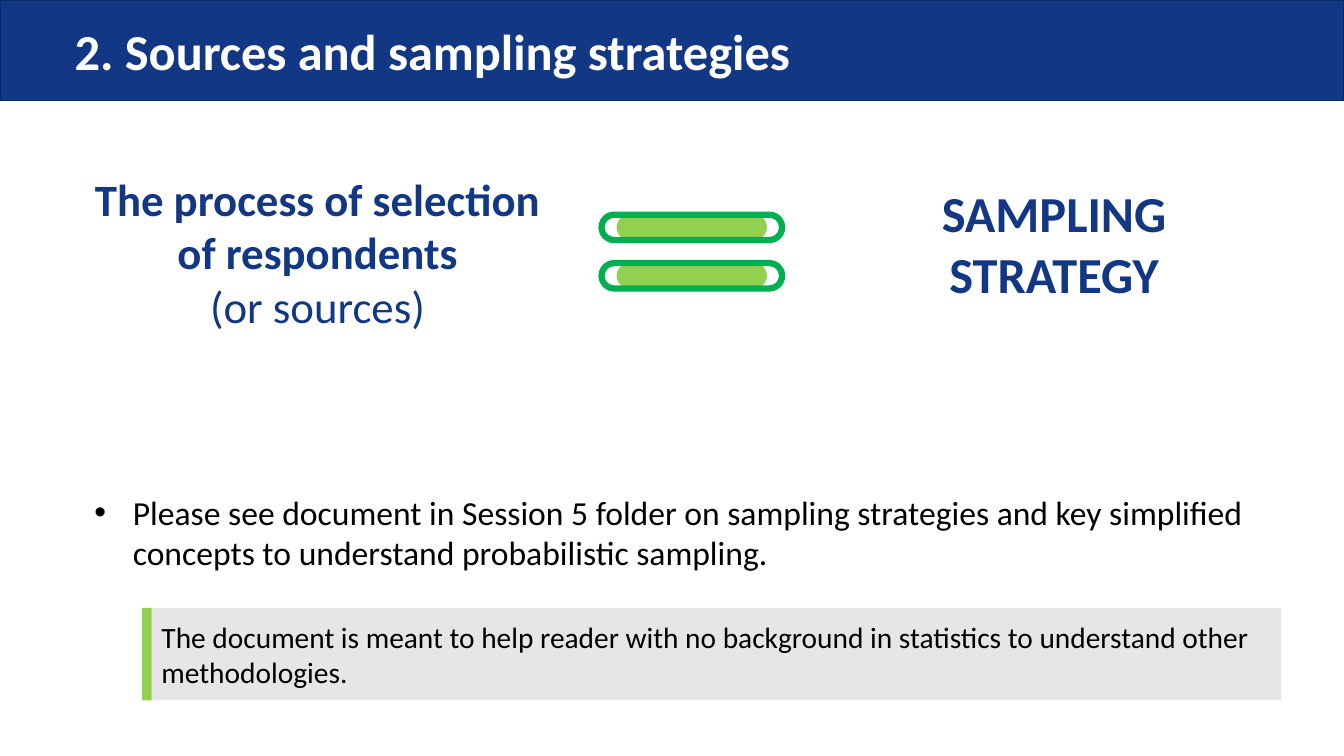
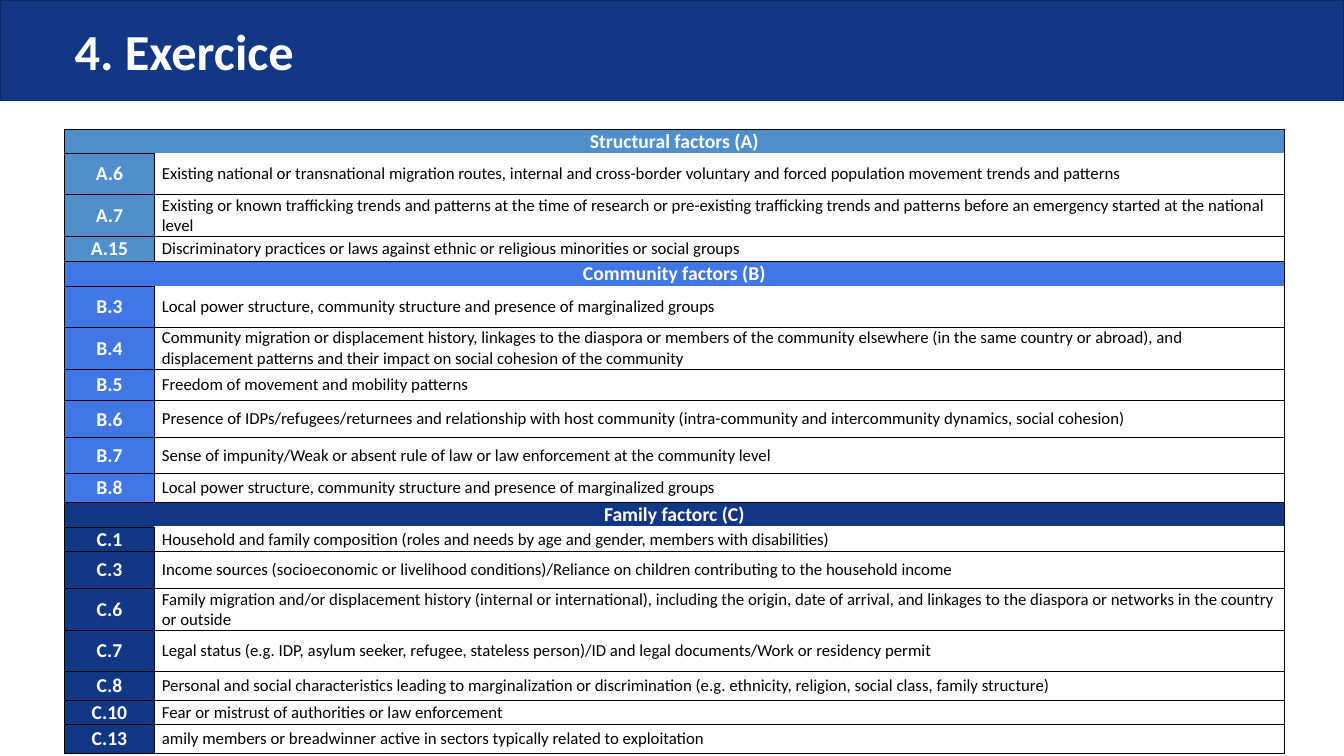
from lxml import etree
from pptx import Presentation
from pptx import util as u
from pptx.dml.color import RGBColor
from pptx.enum import shapes, text
from pptx.oxml import ns

NAVY, SKY, BLUE = "123885", "508FCC", "4177E5"
LIME, GREEN, GREY = "92D050", "00B050", "E7E6E6"
WHITE, BLACK, EDGE = "FFFFFF", "000000", "0D2962"
FONT = "Calibri"
WIDTH, HEIGHT = 33.87, 19.05
CENTER = text.PP_ALIGN.CENTER
MIDDLE = text.MSO_ANCHOR.MIDDLE
RECT = shapes.MSO_SHAPE.RECTANGLE
PILL = shapes.MSO_SHAPE.ROUNDED_RECTANGLE

FACTORS = [
    ("Structural factors (A)", SKY, [
        ("A.6", 1.04, "Existing national or transnational migration routes, internal and cross-border voluntary and forced population movement trends and patterns"),
        ("A.7", 1.06, "Existing or known trafficking trends and patterns at the time of research or pre-existing trafficking trends and patterns before an emergency started at the national level"),
        ("A.15", 0.62, "Discriminatory practices or laws against ethnic or religious minorities or social groups"),
    ]),
    ("Community factors (B)", BLUE, [
        ("B.3", 1.04, "Local power structure, community structure and presence of marginalized groups"),
        ("B.4", 1.06, "Community migration or displacement history, linkages to the diaspora or members of the community elsewhere (in the same country or abroad), and displacement patterns and their impact on social cohesion of the community"),
        ("B.5", 0.79, "Freedom of movement and mobility patterns"),
        ("B.6", 0.93, "Presence of IDPs/refugees/returnees and relationship with host community (intra-community and intercommunity dynamics, social cohesion)"),
        ("B.7", 0.91, "Sense of impunity/Weak or absent rule of law or law enforcement at the community level"),
        ("B.8", 0.72, "Local power structure, community structure and presence of marginalized groups"),
    ]),
    ("Family factorc (C)", NAVY, [
        ("C.1", 0.62, "Household and family composition (roles and needs by age and gender, members with disabilities)"),
        ("C.3", 0.93, "Income sources (socioeconomic or livelihood conditions)/Reliance on children contributing to the household income"),
        ("C.6", 1.06, "Family migration and/or displacement history (internal or international), including the origin, date of arrival, and linkages to the diaspora or networks in the country or outside"),
        ("C.7", 1.04, "Legal status (e.g. IDP, asylum seeker, refugee, stateless person)/ID and legal documents/Work or residency permit"),
        ("C.8", 0.71, "Personal and social characteristics leading to marginalization or discrimination (e.g. ethnicity, religion, social class, family structure)"),
        ("C.10", 0.62, "Fear or mistrust of authorities or law enforcement"),
        ("C.13", 0.72, "amily members or breadwinner active in sectors typically related to exploitation"),
    ]),
]


def rgb(code):
    """Turn a hex string into a colour."""
    return RGBColor.from_string(code)


def write(frame, lines, size, color, bold=False, align=None):
    """Fill a text frame with one paragraph per line and format it."""
    frame.word_wrap = True
    frame.text = "\n".join(lines)
    for paragraph in frame.paragraphs:
        paragraph.alignment = align
        for run in paragraph.runs:
            run.font.name, run.font.size, run.font.bold = FONT, u.Pt(size), bold
            run.font.color.rgb = rgb(color)


def add_label(slide, box, lines, size, color, **style):
    """Place a text box and return its frame."""
    frame = slide.shapes.add_textbox(*map(u.Cm, box)).text_frame
    write(frame, lines, size, color, **style)
    return frame


def add_block(slide, kind, box, fill=None, line=None, weight=1):
    """Place a flat preset shape."""
    block = slide.shapes.add_shape(kind, *map(u.Cm, box))
    block.shadow.inherit = False
    if fill:
        block.fill.solid()
        block.fill.fore_color.rgb = rgb(fill)
    else:
        block.fill.background()
    if line:
        block.line.color.rgb = rgb(line)
        block.line.width = u.Pt(weight)
    else:
        block.line.fill.background()
    return block


def add_titled_slide(deck, title):
    """Add a blank slide with the title band."""
    slide = deck.slides.add_slide(deck.slide_layouts[6])
    add_block(slide, RECT, (0, 0, WIDTH, 2.54), NAVY, EDGE)
    frame = add_label(slide, (1.63, 0.33, 27.59, 2.08), [title], 36, WHITE, bold=True)
    frame.vertical_anchor = MIDDLE
    frame.paragraphs[0].line_spacing = 0.9
    return slide


def add_equals_sign(slide, left, top, width, bar_height, pitch):
    """Draw two outlined bars, each with a narrower filled core."""
    inset = 0.38
    for bar_top in (top, top + pitch):
        core = add_block(slide, PILL, (left + inset, bar_top, width - 2 * inset, bar_height), LIME)
        rim = add_block(slide, PILL, (left, bar_top, width, bar_height), None, GREEN, 4.5)
        for bar in (core, rim):
            bar.adjustments[0] = 0.5


def add_bullet_note(slide, box, note):
    """Place a bulleted paragraph with a hanging indent."""
    frame = add_label(slide, box, [note], 24, BLACK)
    hanging = u.Cm(0.97)
    properties = frame.paragraphs[0]._p.get_or_add_pPr()
    properties.set("marL", str(hanging))
    properties.set("indent", str(-hanging))
    etree.SubElement(properties, ns.qn("a:buFont"), typeface="Arial")
    etree.SubElement(properties, ns.qn("a:buChar"), char="•")


def add_callout(slide, left, top, width, height, message):
    """Place a grey message panel with a green stripe on its left."""
    stripe = 0.24
    panel = add_block(slide, RECT, (left + stripe, top, width - stripe, height), GREY)
    write(panel.text_frame, [message], 21, BLACK, align=text.PP_ALIGN.LEFT)
    panel.text_frame.vertical_anchor = MIDDLE
    add_block(slide, RECT, (left, top, stripe, height), LIME)


def set_borders(cell, **sides):
    """Give each named cell side a solid line of a colour and weight."""
    properties = cell._tc.get_or_add_tcPr()
    for side in "LRTB":
        if side in sides:
            color, weight = sides[side]
            edge = etree.SubElement(properties, ns.qn("a:ln" + side), w=str(u.Pt(weight)))
            fill = etree.SubElement(edge, ns.qn("a:solidFill"))
            etree.SubElement(fill, ns.qn("a:srgbClr"), val=color)


def style_cell(cell, content, fill, size, color, bold=False, align=None, **borders):
    """Write and format one table cell."""
    black = (BLACK, 0.75)
    set_borders(cell, **{**dict.fromkeys("LRTB", black), **borders})
    cell.fill.solid()
    cell.fill.fore_color.rgb = rgb(fill)
    cell.margin_left = cell.margin_right = u.Cm(0.19)
    cell.margin_top = cell.margin_bottom = 0
    cell.vertical_anchor = MIDDLE
    write(cell.text_frame, [content], size, color, bold, align)


def add_factor_table(slide, left, top, width, code_width):
    """Build the factor table, one heading row per group."""
    heading_height = 0.62
    heights = []
    for _, _, factors in FACTORS:
        heights += [heading_height] + [height for _, height, _ in factors]
    box = (left, top, width, sum(heights))
    table = slide.shapes.add_table(len(heights), 2, *map(u.Cm, box)).table
    table.first_row = table.horz_banding = False
    for column, size in zip(table.columns, (code_width, width - code_width)):
        column.width = u.Cm(size)
    for row, height in zip(table.rows, heights):
        row.height = u.Cm(height)
    white = (WHITE, 1)
    label_style = dict(size=14, color=WHITE, bold=True, align=CENTER)
    row = 0
    for heading, color, factors in FACTORS:
        table.cell(row, 0).merge(table.cell(row, 1))
        style_cell(table.cell(row, 0), heading, color, **label_style)
        set_borders(table.cell(row, 1), R=(BLACK, 0.75), T=(BLACK, 0.75), B=white)
        for index, (code, _, description) in enumerate(factors):
            row += 1
            style_cell(table.cell(row, 0), code, color, **label_style)
            top_line = {} if index else {"T": white}
            style_cell(table.cell(row, 1), description, WHITE, 12, BLACK, **top_line)
        row += 1


def build_sampling_slide(deck):
    """Build the slide that defines the sampling strategy."""
    slide = add_titled_slide(deck, "2. Sources and sampling strategies")
    process = add_label(slide, (1.63, 4.19, 12.75, 4.37),
                        ["The process of selection of respondents", "(or sources)"],
                        32, NAVY, bold=True, align=CENTER)
    process.paragraphs[1].runs[0].font.bold = False
    add_label(slide, (20.85, 4.47, 11.43, 3.33), ["SAMPLING", "STRATEGY"],
              36, NAVY, bold=True, align=CENTER)
    add_equals_sign(slide, 15.16, 5.41, 4.55, 0.64, 1.22)
    add_bullet_note(slide, (2.13, 12.27, 30.58, 2.31),
                    "Please see document in Session 5 folder on sampling strategies and key simplified concepts to understand probabilistic sampling.")
    add_callout(slide, 3.58, 15.32, 28.71, 2.33,
                "The document is meant to help reader with no background in statistics to understand other methodologies.")


def build_exercise_slide(deck):
    """Build the slide with the factor table."""
    slide = add_titled_slide(deck, "4. Exercice")
    add_factor_table(slide, 1.63, 3.25, 30.73, 2.26)


def main():
    """Build and save the deck."""
    deck = Presentation()
    deck.slide_width, deck.slide_height = u.Cm(WIDTH), u.Cm(HEIGHT)
    build_sampling_slide(deck)
    build_exercise_slide(deck)
    deck.save("out.pptx")


if __name__ == "__main__":
    main()
